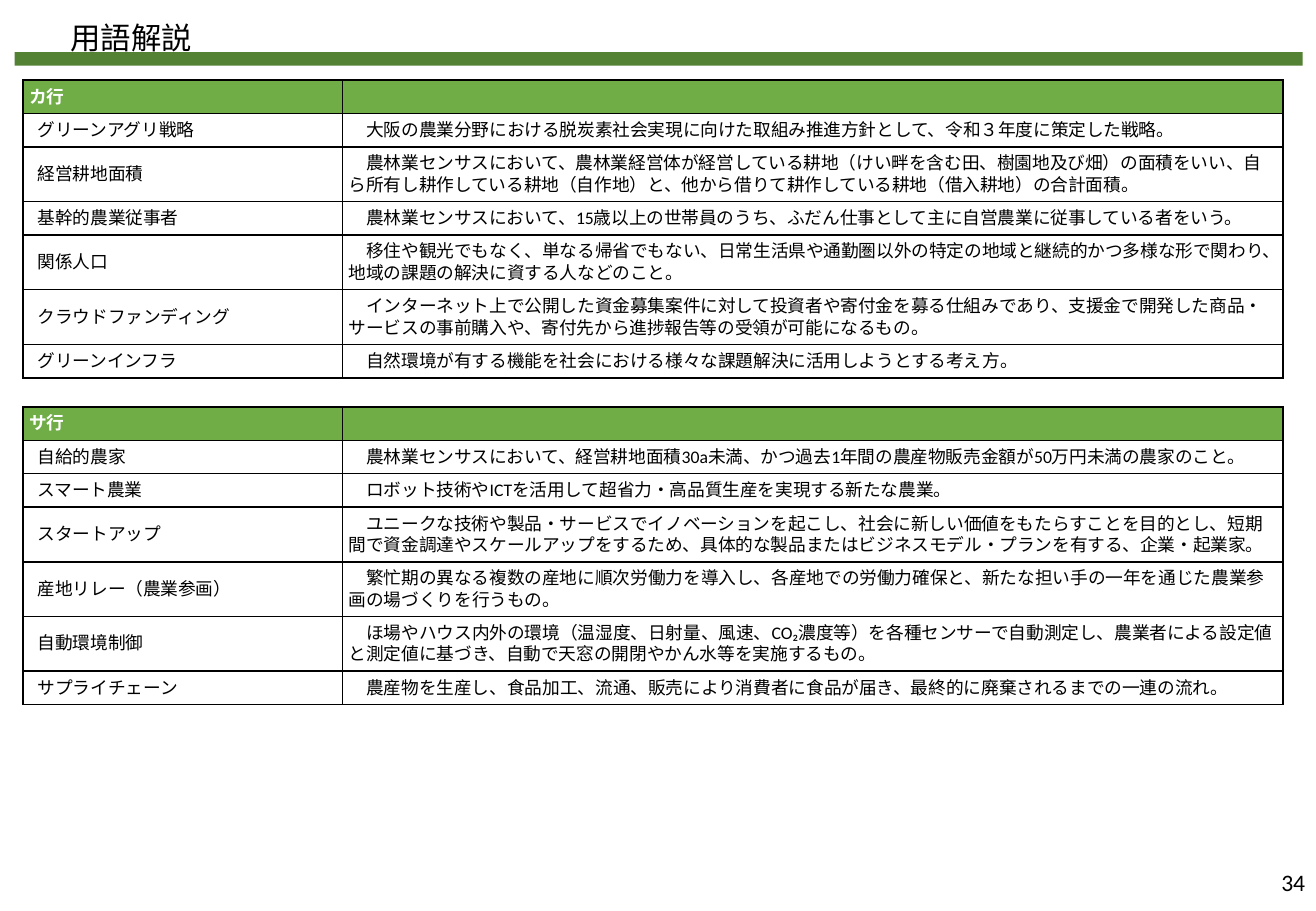
"""Build the glossary slide with one table for each kana row."""
import pptx
import pptx.util
import pptx.dml.color
import pptx.enum.shapes
import pptx.enum.text
import pptx.oxml
import pptx.oxml.ns
from lxml import etree

Inches = pptx.util.Inches
Pt = pptx.util.Pt
ANCHOR = pptx.enum.text.MSO_ANCHOR
ALIGN = pptx.enum.text.PP_ALIGN
qn = pptx.oxml.ns.qn

TITLE = "用語解説"
PAGE = "34"
GLOSSARY = [
    ("カ行", [
        ("グリーンアグリ戦略", "　大阪の農業分野における脱炭素社会実現に向けた取組み推進⽅針として、令和３年度に策定した戦略。", 1),
        ("経営耕地面積", "　農林業センサスにおいて、農林業経営体が経営している耕地（けい畔を含む田、樹園地及び畑）の面積をいい、自ら所有し耕作している耕地（自作地）と、他から借りて耕作している耕地（借入耕地）の合計面積。", 2),
        ("基幹的農業従事者", "　農林業センサスにおいて、15歳以上の世帯員のうち、ふだん仕事として主に自営農業に従事している者をいう。", 1),
        ("関係人口", "　移住や観光でもなく、単なる帰省でもない、日常生活県や通勤圏以外の特定の地域と継続的かつ多様な形で関わり、地域の課題の解決に資する人などのこと。", 2),
        ("クラウドファンディング", "　インターネット上で公開した資金募集案件に対して投資者や寄付金を募る仕組みであり、支援金で開発した商品・サービスの事前購入や、寄付先から進捗報告等の受領が可能になるもの。", 2),
        ("グリーンインフラ", "　自然環境が有する機能を社会における様々な課題解決に活用しようとする考え方。", 1),
    ]),
    ("サ行", [
        ("自給的農家", "　農林業センサスにおいて、経営耕地面積30a未満、かつ過去1年間の農産物販売金額が50万円未満の農家のこと。", 1),
        ("スマート農業", "　ロボット技術やICTを活用して超省力・高品質生産を実現する新たな農業。", 1),
        ("スタートアップ", "　ユニークな技術や製品・サービスでイノベーションを起こし、社会に新しい価値をもたらすことを目的とし、短期間で資金調達やスケールアップをするため、具体的な製品またはビジネスモデル・プランを有する、企業・起業家。", 2),
        ("産地リレー（農業参画）", "　繁忙期の異なる複数の産地に順次労働力を導入し、各産地での労働力確保と、新たな担い手の一年を通じた農業参画の場づくりを行うもの。", 2),
        ("自動環境制御", "　ほ場やハウス内外の環境（温湿度、日射量、風速、CO₂濃度等）を各種センサーで自動測定し、農業者による設定値と測定値に基づき、自動で天窓の開閉やかん水等を実施するもの。", 2),
        ("サプライチェーン", "　農産物を生産し、食品加工、流通、販売により消費者に食品が届き、最終的に廃棄されるまでの一連の流れ。", 1),
    ]),
]
COLORS = {"bar": "548235", "head": "70AD47", "text": "000000", "head_text": "FFFFFF", "border": "000000"}
BODY_FONT, TITLE_FONT = "Calibri", "Noto Sans CJK JP"
BODY_SIZE = 10.5
WIDTH, HEIGHT = 10.83, 7.5
TABLE_LEFT, TABLE_TOP, TABLE_STEP = 0.19, 0.66, 2.69
COLUMNS = (2.63, 7.74)
ROW_HEIGHTS = {1: 0.27, 2: 0.45}
PAD, TERM_PAD = 0.05, 0.12


def rgb(name):
    return pptx.dml.color.RGBColor.from_string(COLORS[name])


def add_run(p, text, size, font, color="text", bold=False):
    r = p.add_run()
    r.text = text
    r.font.size = Pt(size)
    r.font.name = font
    r.font.bold = bold
    r.font.color.rgb = rgb(color)
    etree.SubElement(r.font._element, qn("a:ea"), typeface=font)


def add_text(s, box, text, size, font):
    tf = s.shapes.add_textbox(*map(Inches, box)).text_frame
    tf.word_wrap = True
    add_run(tf.paragraphs[0], text, size, font)
    return tf


def add_borders(cell):
    tcPr = cell._tc.get_or_add_tcPr()
    for i, side in enumerate(("a:lnL", "a:lnR", "a:lnT", "a:lnB")):
        ln = etree.Element(qn(side), w=str(Pt(1)))
        fill = etree.SubElement(ln, qn("a:solidFill"))
        etree.SubElement(fill, qn("a:srgbClr"), val=COLORS["border"])
        tcPr.insert(i, ln)


def fill_cell(cell, text, is_head, left):
    cell.vertical_anchor = ANCHOR.MIDDLE
    cell.margin_left = Inches(left)
    cell.margin_right = cell.margin_top = cell.margin_bottom = Inches(PAD)
    if is_head:
        cell.fill.solid()
        cell.fill.fore_color.rgb = rgb("head")
    else:
        cell.fill.background()
    add_borders(cell)
    p = cell.text_frame.paragraphs[0]
    if text:
        add_run(p, text, BODY_SIZE, BODY_FONT, "head_text" if is_head else "text", is_head)
    else:
        etree.SubElement(p._p, qn("a:endParaRPr"), sz=str(int(BODY_SIZE * 100)))


def add_glossary(s, top, heading, entries):
    rows = [(heading, "", 1)] + entries
    heights = [ROW_HEIGHTS[lines] for _, _, lines in rows]
    box = (TABLE_LEFT, top, sum(COLUMNS), sum(heights))
    table = s.shapes.add_table(len(rows), len(COLUMNS), *map(Inches, box)).table
    table.horz_banding = False
    for column, width in zip(table.columns, COLUMNS):
        column.width = Inches(width)
    for i, (term, meaning, _) in enumerate(rows):
        table.rows[i].height = Inches(heights[i])
        fill_cell(table.cell(i, 0), term, i == 0, TERM_PAD if i else PAD)
        fill_cell(table.cell(i, 1), meaning, i == 0, PAD)


def main():
    prs = pptx.Presentation()
    prs.slide_width, prs.slide_height = Inches(WIDTH), Inches(HEIGHT)
    s = prs.slides.add_slide(prs.slide_layouts[6])

    bar = s.shapes.add_shape(pptx.enum.shapes.MSO_SHAPE.RECTANGLE, *map(Inches, (0.12, 0.43, 10.6, 0.11)))
    bar.shadow.inherit = False
    bar.fill.solid()
    bar.fill.fore_color.rgb = rgb("bar")
    bar.line.fill.background()

    tf = add_text(s, (0, 0, 9.03, 0.4), TITLE, 18, TITLE_FONT)
    tf.margin_left, tf.margin_right = Inches(0.58), Inches(0.08)
    tf.margin_top = tf.margin_bottom = 0
    tf.paragraphs[0].line_spacing = Pt(33)

    tf = add_text(s, (8.4, 7.06, 2.44, 0.4), PAGE, 14, BODY_FONT)
    tf.vertical_anchor = ANCHOR.MIDDLE
    tf.paragraphs[0].alignment = ALIGN.RIGHT

    for i, (heading, entries) in enumerate(GLOSSARY):
        add_glossary(s, TABLE_TOP + i * TABLE_STEP, heading, entries)
    prs.save("out.pptx")


if __name__ == "__main__":
    main()
